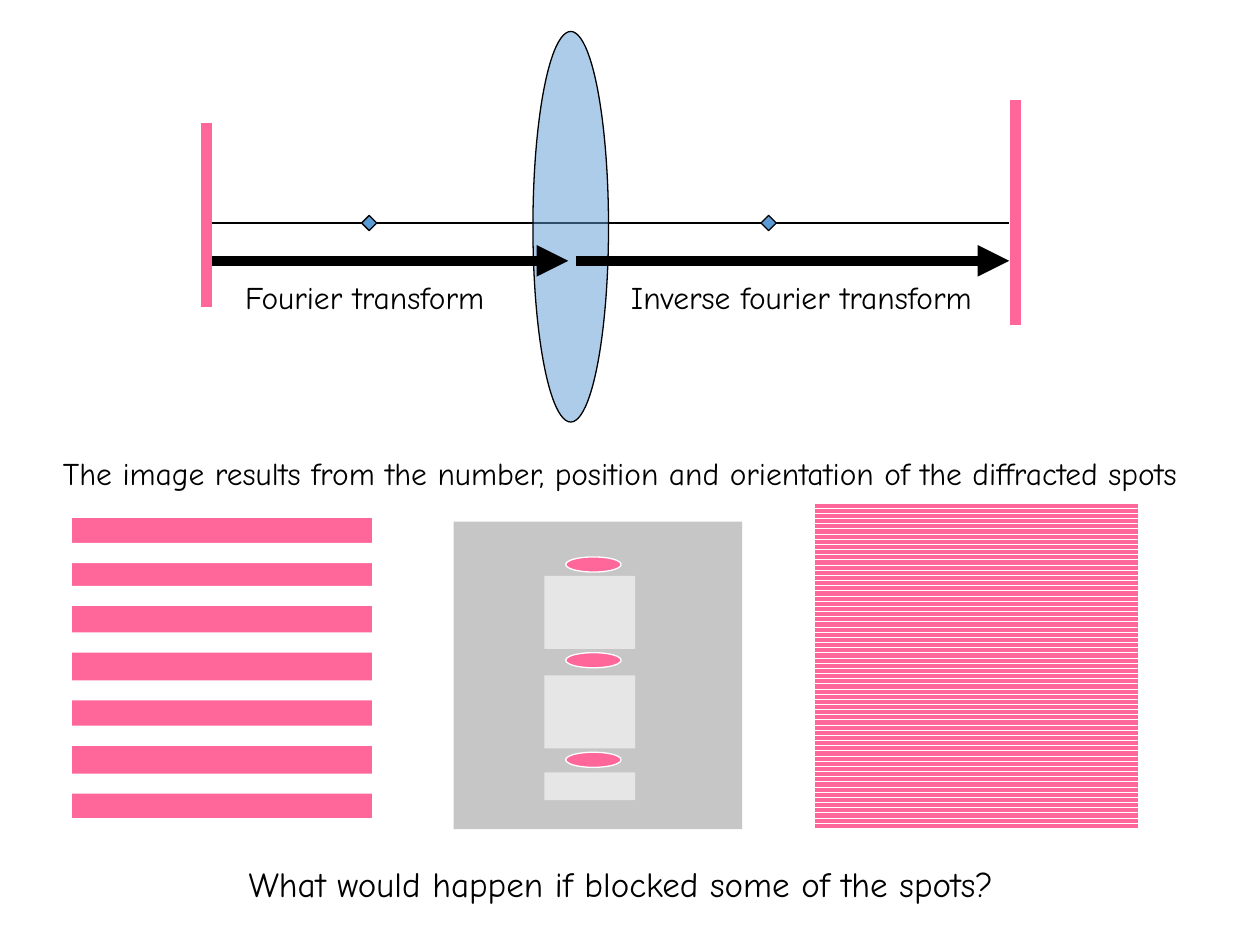
from lxml import etree
from pptx import Presentation
from pptx.dml.color import RGBColor
from pptx.enum.dml import MSO_PATTERN
from pptx.enum.shapes import MSO_CONNECTOR, MSO_SHAPE
from pptx.enum.text import MSO_ANCHOR, MSO_AUTO_SIZE, PP_ALIGN
from pptx.oxml.ns import qn
from pptx.util import Inches, Pt

BLACK = RGBColor(0x00, 0x00, 0x00)
WHITE = RGBColor(0xFF, 0xFF, 0xFF)
PINK = RGBColor(0xFF, 0x66, 0x99)
BLUE = RGBColor(0x5B, 0x9B, 0xD5)
SCREEN_GRAY = RGBColor(0xC6, 0xC6, 0xC6)
BLOCK_GRAY = RGBColor(0xE7, 0xE6, 0xE6)
FONT = "Comic Neue"


def add_text(slide, text, left, top, width, height, size=18, color=BLACK, wrap=False):
    box = slide.shapes.add_textbox(Inches(left), Inches(top), Inches(width), Inches(height))
    frame = box.text_frame
    frame.word_wrap = wrap
    frame.auto_size = MSO_AUTO_SIZE.SHAPE_TO_FIT_TEXT
    frame.vertical_anchor = MSO_ANCHOR.MIDDLE
    paragraph = frame.paragraphs[0]
    paragraph.alignment = PP_ALIGN.CENTER
    run = paragraph.add_run()
    run.text = text
    run.font.name = FONT
    run.font.size = Pt(size)
    run.font.color.rgb = color


def add_figure(slide, kind, left, top, width, height, fill, line=None):
    figure = slide.shapes.add_shape(
        kind, Inches(left), Inches(top), Inches(width), Inches(height))
    figure.shadow.inherit = False
    figure.fill.solid()
    figure.fill.fore_color.rgb = fill
    if line is None:
        figure.line.fill.background()
    else:
        figure.line.color.rgb = line
        figure.line.width = Pt(0.75)
    return figure


def add_line(slide, x1, y1, x2, y2, color=BLACK, width=6, arrow=False):
    line = slide.shapes.add_connector(
        MSO_CONNECTOR.STRAIGHT, Inches(x1), Inches(y1), Inches(x2), Inches(y2))
    line.line.color.rgb = color
    line.line.width = Pt(width)
    if arrow:
        etree.SubElement(line.line._get_or_add_ln(), qn("a:tailEnd"), type="triangle")
    etree.SubElement(line._element.spPr, qn("a:effectLst"))


def set_opacity(figure, percent):
    color = figure._element.spPr.find(qn("a:solidFill"))[0]
    etree.SubElement(color, qn("a:alpha"), val=str(percent * 1000))


def add_lens_diagram(slide, left, top, width):
    """Object and image planes joined by the optical axis through a lens."""
    right = left + width
    axis = top + 1.52
    arrows = top + 1.82
    labels = top + 1.88
    add_line(slide, left, axis, right - 0.05, axis, width=0.75)
    lens = add_figure(slide, MSO_SHAPE.OVAL, left + 2.59, top, 0.6, 3.1, BLUE, BLACK)
    set_opacity(lens, 50)
    for focus in (left + 1.23, left + 4.4):
        add_figure(slide, MSO_SHAPE.DIAMOND, focus, axis - 0.06, 0.12, 0.12, BLUE, BLACK)
    add_line(slide, left - 0.03, arrows, left + 2.87, arrows, arrow=True)
    add_line(slide, left + 2.93, arrows, right - 0.05, arrows, arrow=True)
    add_text(slide, "Fourier transform", left + 0.09, labels, 2.33, 0.45)
    add_text(slide, "Inverse fourier transform", left + 3.08, labels, 3.28, 0.45)
    add_line(slide, left, top + 2.19, left, top + 0.73, color=PINK)
    add_line(slide, right, top + 2.33, right, top + 0.54, color=PINK)


def add_coarse_grating(slide, left, top, size):
    add_figure(slide, MSO_SHAPE.RECTANGLE, left, top, size, size, PINK, WHITE)
    for gap in (0.2, 0.54, 0.91, 1.29, 1.65, 2.03):
        add_figure(slide, MSO_SHAPE.RECTANGLE, left, top + gap, size, 0.16, WHITE)


def add_blocked_spots(slide, left, top, width, height):
    """Diffraction screen with spots and the blocks between them."""
    add_figure(slide, MSO_SHAPE.RECTANGLE, left, top, width, height, SCREEN_GRAY)
    for spot in (0.28, 1.04, 1.83):
        add_figure(slide, MSO_SHAPE.OVAL, left + 0.89, top + spot, 0.44, 0.12, PINK, WHITE)
    for block, depth in ((0.43, 0.58), (1.22, 0.58), (1.99, 0.22)):
        add_figure(slide, MSO_SHAPE.RECTANGLE, left + 0.72, top + block, 0.72, depth,
                   BLOCK_GRAY)


def add_fine_grating(slide, left, top, width, height):
    grating = add_figure(slide, MSO_SHAPE.RECTANGLE, left, top, width, height, PINK, WHITE)
    grating.fill.patterned()
    grating.fill.pattern = MSO_PATTERN.DARK_HORIZONTAL
    grating.fill.fore_color.rgb = PINK
    grating.fill.back_color.rgb = WHITE


def main():
    deck = Presentation()
    deck.slide_width, deck.slide_height = Inches(10), Inches(7.5)
    slide = deck.slides.add_slide(deck.slide_layouts[6])
    add_lens_diagram(slide, 1.64, 0.25, 6.42)
    add_text(slide, "The image results from the number, position and orientation "
             "of the diffracted spots", 0.17, 3.35, 9.5, 0.8, wrap=True)
    add_coarse_grating(slide, 0.57, 4.11, 2.39)
    add_blocked_spots(slide, 3.6, 4.14, 2.29, 2.44)
    add_fine_grating(slide, 6.46, 3.99, 2.58, 2.59)
    add_text(slide, "What would happen if blocked some of the spots?",
             1.61, 6.77, 6.64, 0.49, size=20)
    deck.save("out.pptx")


if __name__ == "__main__":
    main()
